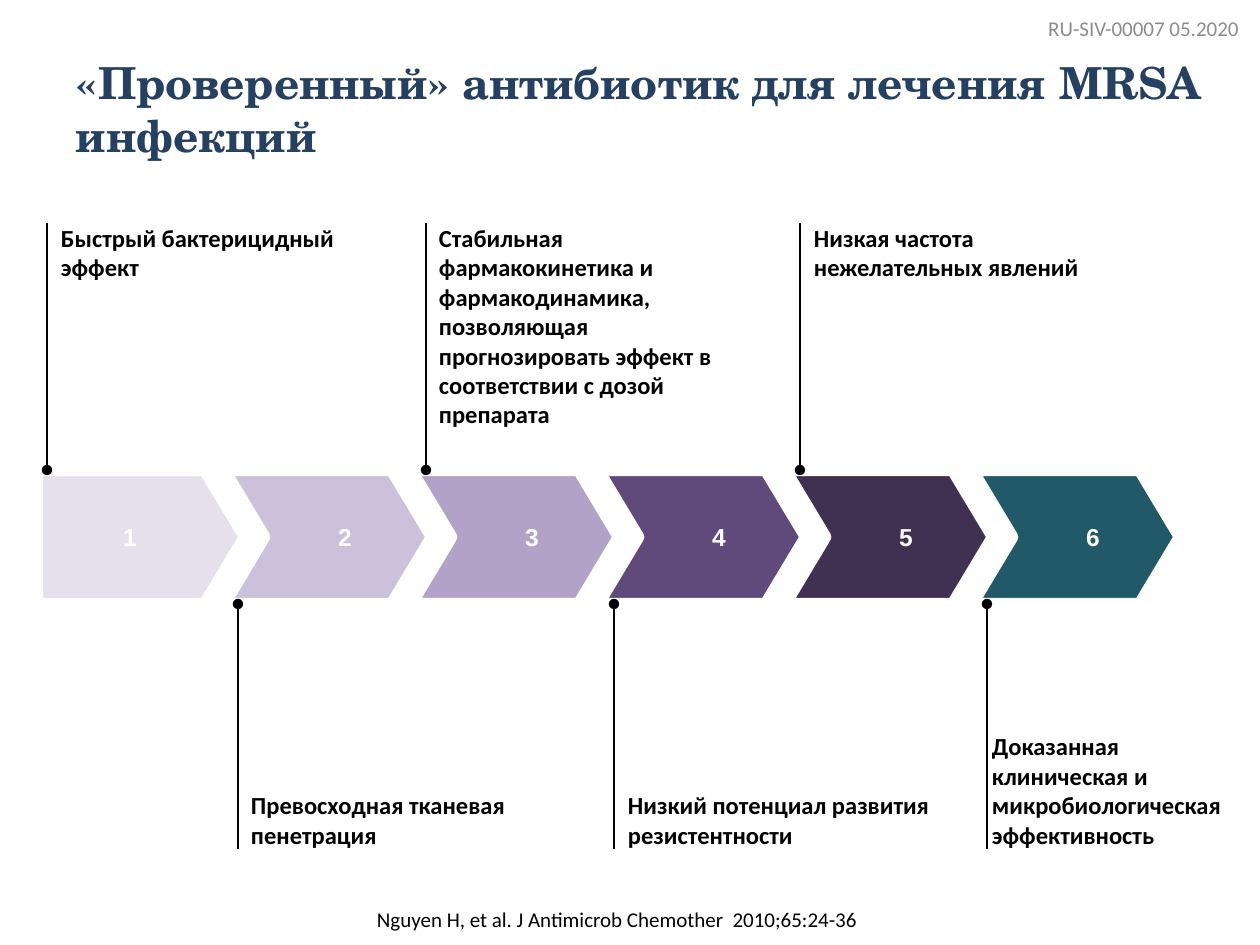
from dataclasses import dataclass

from lxml.etree import SubElement
from pptx import Presentation
from pptx.dml.color import RGBColor
from pptx.enum.shapes import MSO_CONNECTOR, MSO_SHAPE
from pptx.enum.text import MSO_ANCHOR, MSO_AUTO_SIZE, PP_ALIGN
from pptx.oxml.ns import qn
from pptx.util import Pt


@dataclass(frozen=True)
class Theme:
    title: str = "254061"
    text: str = "000000"
    code: str = "8C8C8C"
    white: str = "FFFFFF"
    steps: tuple = ("E6E0EC", "CCC1DA", "B3A2C7", "604A7B", "403152", "215968")
    serif: str = "TeX Gyre Schola"
    sans: str = "Calibri"
    digit: str = "Arial"
    head: float = 25.2
    body: float = 14
    note: float = 12
    edge: float = 7
    thin: float = 0.75


THEME = Theme()
SCALE = 914400 / 126
PITCH = 187
WIDE = 208

CALLS = [
    ("Быстрый бактерицидный эффект", 47, 48, 328),
    ("Превосходная тканевая пенетрация", 238, 238, 328),
    ("Стабильная фармакокинетика и фармакодинамика, позволяющая "
     "прогнозировать эффект в соответствии с дозой препарата", 426, 426, 328),
    ("Низкий потенциал развития резистентности", 614, 615, 328),
    ("Низкая частота нежелательных явлений", 800, 801, 328),
    ("Доказанная клиническая и микробиологическая эффективность", 987, 979, 286),
]


def px(*nums):
    return [round(n * SCALE) for n in nums]


def style(frame, text, font, size, color, bold=False, align=PP_ALIGN.LEFT,
          anchor=MSO_ANCHOR.TOP, inset=(13, 6, 13, 6)):
    frame.text = text
    frame.word_wrap = True
    frame.auto_size = MSO_AUTO_SIZE.NONE
    frame.vertical_anchor = anchor
    (frame.margin_left, frame.margin_top,
     frame.margin_right, frame.margin_bottom) = px(*inset)
    para = frame.paragraphs[0]
    para.alignment = align
    face = para.runs[0].font
    face.name, face.size, face.bold = font, Pt(size), bold
    face.color.rgb = RGBColor.from_string(color)


def label(slide, box, *args, **opts):
    style(slide.shapes.add_textbox(*px(*box)).text_frame, *args, **opts)


def heading(slide, box):
    title = slide.shapes.title
    title.left, title.top, title.width, title.height = px(*box)
    style(title.text_frame, "«Проверенный» антибиотик для лечения MRSA инфекций",
          THEME.serif, THEME.head, THEME.title, bold=True, anchor=MSO_ANCHOR.MIDDLE)


def arrows(slide, box):
    left, top, wide, high = box
    for num, color in enumerate(THEME.steps):
        x = left + num * PITCH
        kind = MSO_SHAPE.CHEVRON if num else MSO_SHAPE.PENTAGON
        step = slide.shapes.add_shape(kind, *px(x, top, wide, high))
        step.adjustments[0] = 0.3
        step.shadow.inherit = False
        step.fill.solid()
        step.fill.fore_color.rgb = RGBColor.from_string(color)
        step.line.color.rgb = RGBColor.from_string(THEME.white)
        step.line.width = Pt(THEME.edge)
        shift = 46 if num else 18
        label(slide, (x + shift, top + 39, 137, 56), str(num + 1), THEME.digit,
              THEME.body, THEME.white, bold=True, align=PP_ALIGN.CENTER,
              anchor=MSO_ANCHOR.MIDDLE, inset=(13, 13, 0, 13))


def pole(slide, x, start, end):
    line = slide.shapes.add_connector(MSO_CONNECTOR.STRAIGHT, *px(x, start, x, end))
    line.line.color.rgb = RGBColor.from_string(THEME.text)
    line.line.width = Pt(THEME.thin)
    SubElement(line.line._get_or_add_ln(), qn("a:headEnd"), type="oval")
    SubElement(line._element.spPr, qn("a:effectLst"))


def calls(slide, box):
    left, top, wide, high = box
    reach = 247
    for num, (text, x, start, width) in enumerate(CALLS):
        if num % 2:
            base, end = top + high, top + high + reach - 2
            place, anchor = end - 165, MSO_ANCHOR.BOTTOM
        else:
            base, end = top, top - reach
            place, anchor = end, MSO_ANCHOR.TOP
        label(slide, (start, place, width, 165), text, THEME.sans, THEME.body,
              THEME.text, bold=True, anchor=anchor, inset=(13, 0, 13, 0))
        pole(slide, x, base, end)


def notes(slide, box):
    left, top, wide, high = box
    label(slide, (left + 364, top + high - 44, 630, 38),
          "Nguyen H, et al. J Antimicrob Chemother  2010;65:24-36",
          THEME.sans, THEME.note, THEME.text)
    label(slide, (left + wide - 233, top, 233, 56), "RU-SIV-00007 05.2020",
          THEME.sans, THEME.note, THEME.code, align=PP_ALIGN.CENTER,
          anchor=MSO_ANCHOR.MIDDLE)


def main():
    deck = Presentation()
    deck.slide_width, deck.slide_height = px(1260, 945)
    slide = deck.slides.add_slide(deck.slide_layouts[5])
    band = (37, 470, 5 * PITCH + WIDE, 134)
    heading(slide, (63, 49, 1170, 119))
    arrows(slide, (band[0], band[1], WIDE, band[3]))
    calls(slide, band)
    notes(slide, (0, 0, 1260, 945))
    deck.save("out.pptx")


if __name__ == "__main__":
    main()
